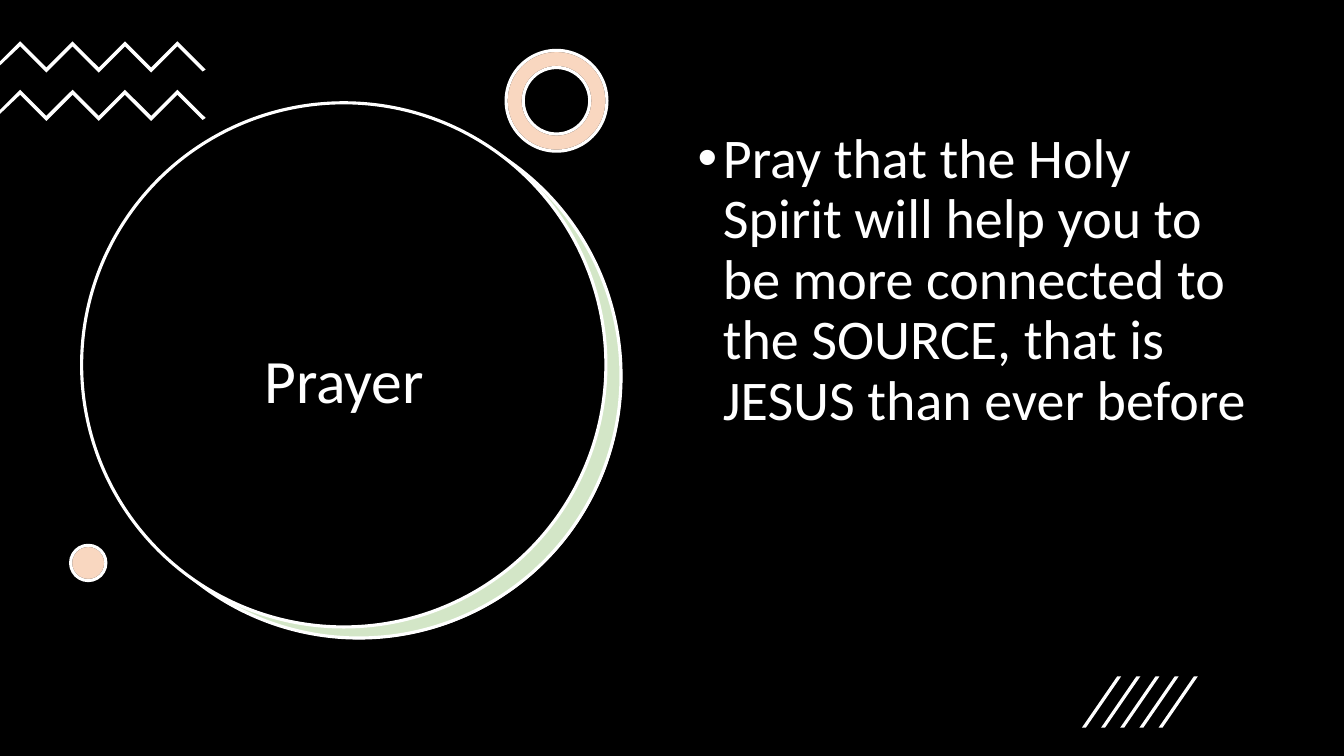
from lxml.etree import SubElement
from pptx import Presentation
from pptx.dml.color import RGBColor
from pptx.enum.shapes import MSO_SHAPE
from pptx.enum.text import MSO_ANCHOR, MSO_AUTO_SIZE, PP_ALIGN
from pptx.oxml.ns import qn
from pptx.util import Pt

TITLE = "Prayer"
BODY = ("Pray that the Holy Spirit will help you to be more connected to "
        "the SOURCE, that is JESUS than ever before")
FONT = "Calibri"
COLORS = {"black": "000000", "white": "FFFFFF", "green": "70AD47", "orange": "ED7D31"}

PX = 9144
SLIDE_SIZE = (1333, 750)
TITLE_BOX = (121, 205, 441, 352)
BODY_BOX = (682, 124, 571, 476)
RING_BOX = (502, 50, 100, 100)
DOT_BOX = (70, 541, 35, 35)
TINT = 30
OUTLINE = 2.25

BACKDROP = [
    (MSO_SHAPE.RECTANGLE, (0, 0, *SLIDE_SIZE), "black", None, None),
    (MSO_SHAPE.OVAL, (97, 114, 520, 520), "white", None, None),
    (MSO_SHAPE.OVAL, (96, 113, 520, 520), "green", "white", TINT),
    (MSO_SHAPE.OVAL, (81, 102, 520, 520), "black", "white", None),
]
ACCENTS = [
    (MSO_SHAPE.DONUT, RING_BOX, "white", "black", None),
    (MSO_SHAPE.DONUT, RING_BOX, "orange", "white", TINT),
    (MSO_SHAPE.OVAL, DOT_BOX, "white", "black", None),
    (MSO_SHAPE.OVAL, DOT_BOX, "orange", "white", TINT),
]
RING_THICKNESS = 0.17

ZIGZAG_TOPS = (41, 89)
ZIGZAG_START, ZIGZAG_STEP, ZIGZAG_CORNERS, ZIGZAG_THICKNESS = 20, 26, 7, 5

SLASH_BOX = (1073, 671, 39, 51)
SLASH_STEP, SLASH_COUNT, SLASH_SLANT = 19, 5, 0.9


def color(name):
    return RGBColor.from_string(COLORS[name])


def paint(shape, fill, line=None, opacity=None):
    shape.shadow.inherit = False
    shape.fill.solid()
    shape.fill.fore_color.rgb = color(fill)
    if opacity:
        rgb = shape._element.spPr.find(qn("a:solidFill")).find(qn("a:srgbClr"))
        SubElement(rgb, qn("a:alpha"), val=str(opacity * 1000))
    if line:
        shape.line.color.rgb = color(line)
        shape.line.width = Pt(OUTLINE)
    else:
        shape.line.fill.background()


def add_preset(slide, kind, box, fill, line=None, opacity=None):
    shape = slide.shapes.add_shape(kind, *(value * PX for value in box))
    paint(shape, fill, line, opacity)
    return shape


def add_zigzag(slide, top):
    upper = [(ZIGZAG_START + ZIGZAG_STEP * i, top + ZIGZAG_STEP * (i % 2))
             for i in range(ZIGZAG_CORNERS)]
    lower = [(x, y + ZIGZAG_THICKNESS) for x, y in reversed(upper)]
    right_end = [(204, top + 28), (201, top + 30)]
    left_end = [(0, top + 24), (0, top + 20)]
    points = upper + right_end + lower + left_end
    builder = slide.shapes.build_freeform(*points[0], scale=PX)
    builder.add_line_segments(points[1:], close=True)
    paint(builder.convert_to_shape(), "white")


def fill_placeholder(slide, placeholder, box, text, size, align, anchor):
    slide.shapes._spTree.append(placeholder._element)
    placeholder.left, placeholder.top, placeholder.width, placeholder.height = (
        value * PX for value in box)
    frame = placeholder.text_frame
    frame.word_wrap = True
    frame.auto_size = MSO_AUTO_SIZE.NONE
    frame.vertical_anchor = anchor
    paragraph = frame.paragraphs[0]
    paragraph.alignment = align
    paragraph.line_spacing = 0.9
    paragraph.space_before = Pt(0)
    run = paragraph.add_run()
    run.text = text
    run.font.name = FONT
    run.font.size = Pt(size)
    run.font.color.rgb = color("white")
    return paragraph


def add_bullet(paragraph, indent):
    properties = paragraph._p.get_or_add_pPr()
    properties.set("marL", str(indent * PX))
    properties.set("indent", str(-indent * PX))
    SubElement(properties, qn("a:buFont"), typeface="Arial")
    SubElement(properties, qn("a:buChar"), char="•")


def main():
    presentation = Presentation()
    presentation.slide_width, presentation.slide_height = (
        value * PX for value in SLIDE_SIZE)
    slide = presentation.slides.add_slide(presentation.slide_layouts[1])
    title, body = slide.shapes.title, slide.placeholders[1]

    for item in BACKDROP:
        add_preset(slide, *item)
    fill_placeholder(slide, title, TITLE_BOX, TITLE, 44,
                     PP_ALIGN.CENTER, MSO_ANCHOR.MIDDLE)
    for top in ZIGZAG_TOPS:
        add_zigzag(slide, top)
    for item in ACCENTS:
        shape = add_preset(slide, *item)
        if item[0] == MSO_SHAPE.DONUT:
            shape.adjustments[0] = RING_THICKNESS
    paragraph = fill_placeholder(slide, body, BODY_BOX, BODY, 40,
                                 PP_ALIGN.LEFT, MSO_ANCHOR.TOP)
    add_bullet(paragraph, 25)

    left, top, width, height = SLASH_BOX
    for i in range(SLASH_COUNT):
        slash = add_preset(slide, MSO_SHAPE.PARALLELOGRAM,
                           (left + i * SLASH_STEP, top, width, height), "white")
        slash.adjustments[0] = SLASH_SLANT

    presentation.save("out.pptx")


if __name__ == "__main__":
    main()
